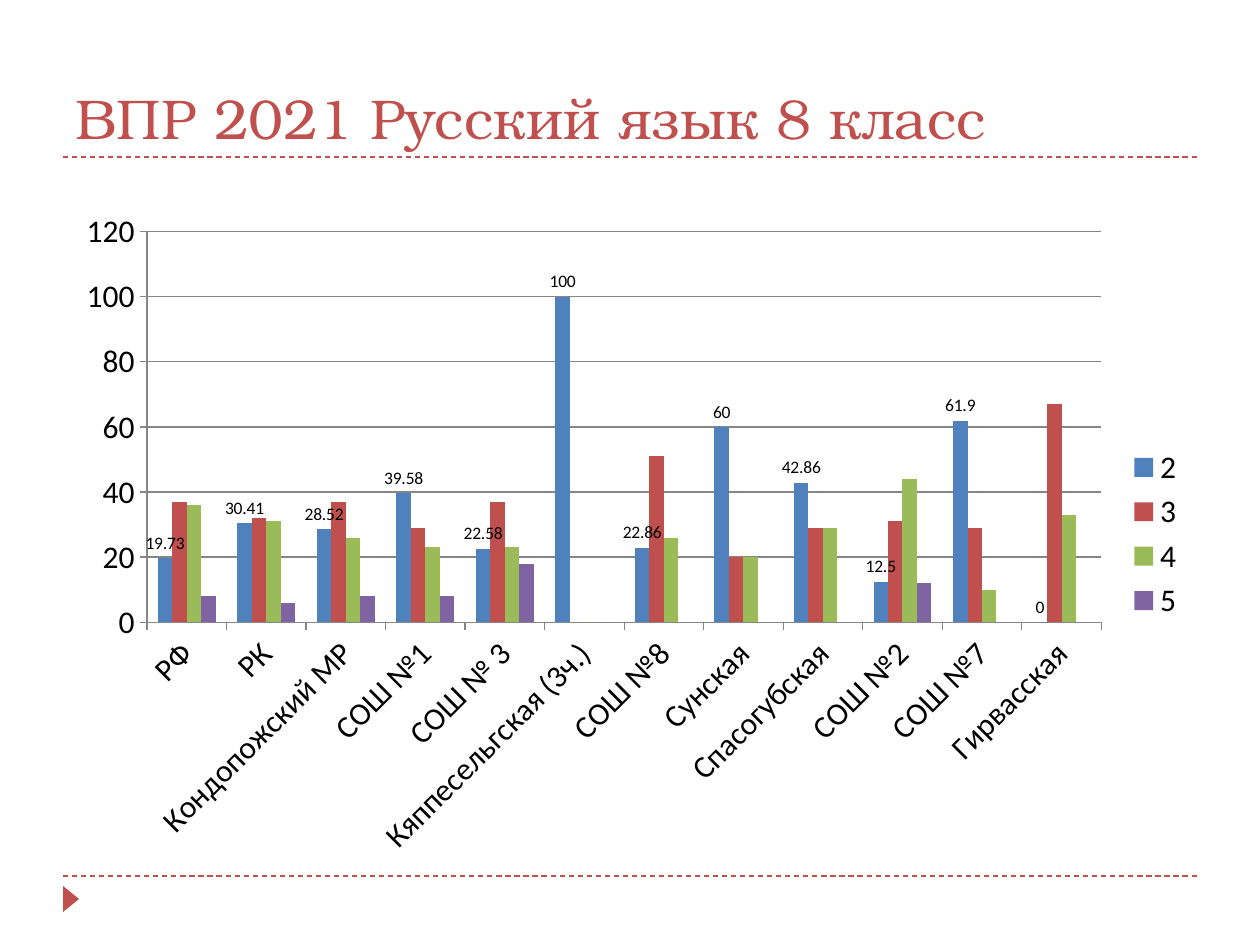
from lxml import etree
from pptx import Presentation
from pptx.chart.data import CategoryChartData
from pptx.dml.color import RGBColor
from pptx.enum.chart import XL_CHART_TYPE, XL_LABEL_POSITION, XL_LEGEND_POSITION, XL_TICK_MARK
from pptx.enum.dml import MSO_LINE
from pptx.enum.shapes import MSO_CONNECTOR, MSO_SHAPE
from pptx.enum.text import MSO_ANCHOR
from pptx.oxml.ns import qn
from pptx.util import Pt

BARS = XL_CHART_TYPE.COLUMN_CLUSTERED
ABOVE = XL_LABEL_POSITION.OUTSIDE_END
RIGHT = XL_LEGEND_POSITION.RIGHT
TICK = XL_TICK_MARK.OUTSIDE
DASH = MSO_LINE.DASH
LINE = MSO_CONNECTOR.STRAIGHT
WEDGE = MSO_SHAPE.ISOSCELES_TRIANGLE
LOW = MSO_ANCHOR.BOTTOM

SCALE = 914400 / 126
COLORS = {"accent": "C0504D", "text": "000000", "grid": "868686",
          "2": "4F81BD", "3": "C0504D", "4": "9BBB59", "5": "8064A2"}
TITLE = {"name": "TeX Gyre Bonum", "size": Pt(32)}
BODY = {"name": "Calibri", "size": Pt(18)}
LABEL = {"name": "Calibri", "size": Pt(10)}

SCHOOLS = ["РФ", "РК", "Кондопожский МР", "СОШ №1", "СОШ № 3",
           "Кяппесельгская (3ч.)", "СОШ №8", "Сунская", "Спасогубская",
           "СОШ №2", "СОШ №7", "Гирвасская"]
MARKS = {
    "2": [19.73, 30.41, 28.52, 39.58, 22.58, 100, 22.86, 60, 42.86, 12.5, 61.9, 0],
    "3": [37, 32, 37, 29, 37, 0, 51, 20, 29, 31, 29, 67],
    "4": [36, 31, 26, 23, 23, 0, 26, 20, 29, 44, 10, 33],
    "5": [8, 6, 8, 8, 18, 0, 0, 0, 0, 12, 0, 0],
}


def px(*nums):
    return [round(n * SCALE) for n in nums]


def rgb(key):
    return RGBColor.from_string(COLORS[key])


def style(font, form, key):
    for name, value in form.items():
        setattr(font, name, value)
    font.color.rgb = rgb(key)


def paint(fill, key):
    fill.solid()
    fill.fore_color.rgb = rgb(key)


def add_rule(slide, y):
    rule = slide.shapes.add_connector(LINE, *px(63, y, 1197, y))
    rule.line.color.rgb = rgb("accent")
    rule.line.width = Pt(0.75)
    rule.line.dash_style = DASH
    etree.SubElement(rule._element.spPr, qn("a:effectLst"))


def add_wedge(slide):
    wedge = slide.shapes.add_shape(WEDGE, *px(58, 891, 26, 16))
    wedge.rotation = 90
    wedge.shadow.inherit = False
    paint(wedge.fill, "accent")
    wedge.line.fill.background()


def add_title(slide, text):
    frame = slide.shapes.add_textbox(*px(63, 21, 1134, 136)).text_frame
    frame.word_wrap = True
    frame.vertical_anchor = LOW
    run = frame.paragraphs[0].add_run()
    run.text = text
    style(run.font, TITLE, "accent")


def add_bars(slide):
    data = CategoryChartData()
    data.categories = SCHOOLS
    for name, vals in MARKS.items():
        data.add_series(name, vals)
    chart = slide.shapes.add_chart(BARS, *px(64, 199, 1133, 670), data).chart
    style(chart.font, BODY, "text")
    chart.has_title = False
    chart.has_legend = True
    chart.legend.position = RIGHT
    chart.legend.include_in_layout = False
    plot = chart.plots[0]
    plot.vary_by_categories = False
    plot.gap_width = 150
    plot.overlap = 0
    for bar in plot.series:
        paint(bar.format.fill, bar.name)
        bar.invert_if_negative = False
    add_labels(plot.series[0])
    for axis in (chart.category_axis, chart.value_axis):
        axis.major_tick_mark = TICK
        axis.format.line.color.rgb = rgb("grid")
        axis.format.line.width = Pt(0.75)
    grid = chart.value_axis.major_gridlines.format.line
    grid.color.rgb = rgb("grid")
    grid.width = Pt(0.75)


def add_labels(bar):
    labels = bar.data_labels
    labels.show_value = True
    labels.position = ABOVE
    style(labels.font, LABEL, "text")


def main():
    deck = Presentation()
    deck.slide_width, deck.slide_height = px(1260, 945)
    slide = deck.slides.add_slide(deck.slide_layouts[6])
    for y in (876, 157):
        add_rule(slide, y)
    add_wedge(slide)
    add_title(slide, "ВПР 2021 Русский язык 8 класс")
    add_bars(slide)
    deck.save("out.pptx")


if __name__ == "__main__":
    main()
